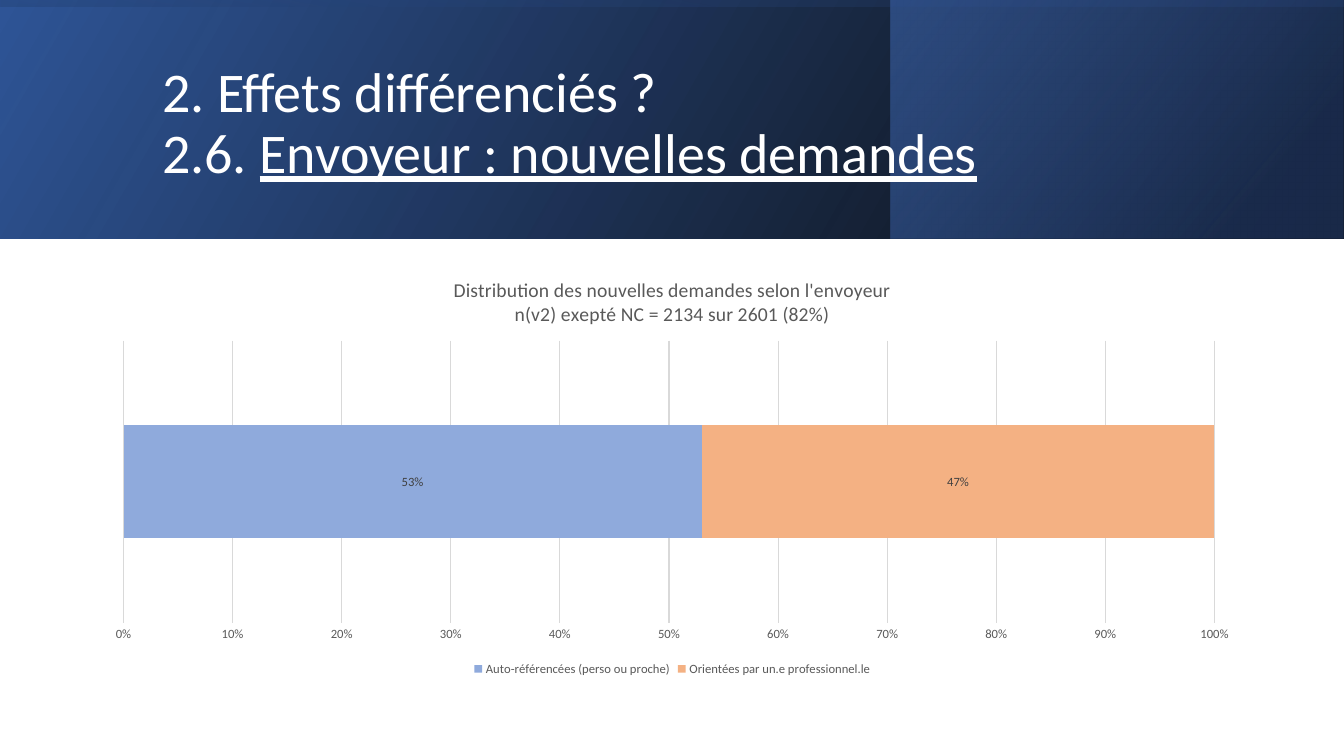
"""Build the slide on new requests by sender: gradient banner, title and stacked bar."""
from lxml import etree
from pptx import Presentation
from pptx.chart.data import CategoryChartData
from pptx.dml.color import RGBColor
from pptx.enum.chart import XL_CHART_TYPE as ChartType, XL_LABEL_POSITION as LabelPos
from pptx.enum.chart import XL_LEGEND_POSITION as LegendPos, XL_TICK_MARK as Tick
from pptx.enum.shapes import MSO_SHAPE as Preset
from pptx.enum.text import MSO_ANCHOR as Anchor
from pptx.oxml.ns import qn
from pptx.util import Pt

HEADING = [("2. Effets différenciés ?\v2.6. ", False), ("Envoyeur : nouvelles demandes", True)]
CHART_TITLE = ["Distribution des nouvelles demandes selon l'envoyeur",
               "n(v2) exepté NC = 2134 sur 2601 (82%)"]
SENDERS = [("Auto-référencées (perso ou proche)", 0.53, "8FAADC"),
           ("Orientées par un.e professionnel.le", 0.47, "F4B183")]
THEME = dict(font="Calibri", white="FFFFFF", grey="595959", label="404040", grid="D9D9D9",
             heading=40, chart_title=14, small=9)
WIDTH, HEIGHT, BANNER = 960, 540, 170.64
ACCENT_LEFT = 636.5
BANDS = [
    ((0, 0, WIDTH, BANNER), 0, 330, [(0, "000000", 96), (100, "2F5597", 100)]),
    ((ACCENT_LEFT, 0, WIDTH - ACCENT_LEFT, BANNER), 0, 320,
     [(19, "203864", 68), (100, "4472C4", 48)]),
    (((WIDTH - BANNER) / 2, (BANNER - WIDTH) / 2, BANNER, WIDTH), 270, 350,
     [(23, "2F5597", 16), (99, "000000", 45)]),
]
HEADING_BOX = (108.7, 27.4, 765.4, 123.8)
CHART_BOX = (66.2, 185.8, 828, 300.2)


def style(font, size, color, underline=None):
    """Apply the theme font with a size and colour."""
    font.name, font.size, font.bold = THEME["font"], Pt(size), False
    font.color.rgb = RGBColor.from_string(color)
    font.underline = underline


def write(paragraph, text, **fmt):
    """Add a formatted run to a paragraph, breaking lines at vertical tabs."""
    for index, line in enumerate(text.split("\v")):
        if index:
            paragraph.add_line_break()
        run = paragraph.add_run()
        run.text = line
        style(run.font, **fmt)


def add_band(slide, box, rotation, angle, stops):
    """Add a mirrored rectangle with a translucent linear gradient."""
    band = slide.shapes.add_shape(Preset.RECTANGLE, *map(Pt, box))
    band.shadow.inherit = False
    band.rotation = rotation
    band.line.fill.background()
    band.fill.gradient()
    props = band._element.spPr
    props.find(qn("a:xfrm")).set("flipH", "1")
    gradient = props.find(qn("a:gradFill"))
    for child in list(gradient):
        gradient.remove(child)
    stop_list = etree.SubElement(gradient, qn("a:gsLst"))
    for position, color, opacity in stops:
        stop = etree.SubElement(stop_list, qn("a:gs"), pos=str(position * 1000))
        tint = etree.SubElement(stop, qn("a:srgbClr"), val=color)
        etree.SubElement(tint, qn("a:alpha"), val=str(opacity * 1000))
    etree.SubElement(gradient, qn("a:lin"), ang=str(angle * 60000), scaled="0")


def add_heading(slide):
    """Add the two-line heading over the banner."""
    frame = slide.shapes.add_textbox(*map(Pt, HEADING_BOX)).text_frame
    frame.word_wrap = True
    frame.vertical_anchor = Anchor.MIDDLE
    frame.paragraphs[0].line_spacing = 0.9
    for text, underline in HEADING:
        write(frame.paragraphs[0], text, size=THEME["heading"], color=THEME["white"],
              underline=underline)


def add_sender_chart(slide):
    """Add the stacked bar of requests by sender."""
    data = CategoryChartData(number_format="0%")
    data.categories = ["1"]
    for name, share, _ in SENDERS:
        data.add_series(name, [share])
    chart = slide.shapes.add_chart(ChartType.BAR_STACKED, *map(Pt, CHART_BOX), data).chart
    style(chart.font, THEME["small"], THEME["grey"])

    title = chart.chart_title.text_frame
    for index, line in enumerate(CHART_TITLE):
        paragraph = title.add_paragraph() if index else title.paragraphs[0]
        write(paragraph, line, size=THEME["chart_title"], color=THEME["grey"])
    chart.chart_title.include_in_layout = False

    chart.has_legend = True
    chart.legend.position = LegendPos.BOTTOM
    chart.legend.include_in_layout = False
    style(chart.legend.font, THEME["small"], THEME["grey"])

    chart.category_axis.visible = False
    axis = chart.value_axis
    axis.minimum_scale, axis.maximum_scale, axis.major_unit = 0, 1, 0.1
    axis.major_tick_mark = axis.minor_tick_mark = Tick.NONE
    axis.format.line.fill.background()
    grid = axis.major_gridlines.format.line
    grid.width, grid.color.rgb = Pt(0.75), RGBColor.from_string(THEME["grid"])
    axis.tick_labels.number_format = "0%"
    axis.tick_labels.number_format_is_linked = False
    style(axis.tick_labels.font, THEME["small"], THEME["grey"])

    plot = chart.plots[0]
    plot.gap_width, plot.overlap, plot.vary_by_categories = 150, 100, False
    for series, (_, _, color) in zip(plot.series, SENDERS):
        series.format.fill.solid()
        series.format.fill.fore_color.rgb = RGBColor.from_string(color)
        labels = series.data_labels
        labels.show_value, labels.position = True, LabelPos.CENTER
        labels.number_format, labels.number_format_is_linked = "0%", False
        style(labels.font, THEME["small"], THEME["label"])


def main():
    """Assemble and save the slide."""
    deck = Presentation()
    deck.slide_width, deck.slide_height = Pt(WIDTH), Pt(HEIGHT)
    slide = deck.slides.add_slide(deck.slide_layouts[6])
    for band in BANDS:
        add_band(slide, *band)
    add_heading(slide)
    add_sender_chart(slide)
    deck.save("out.pptx")


if __name__ == "__main__":
    main()
